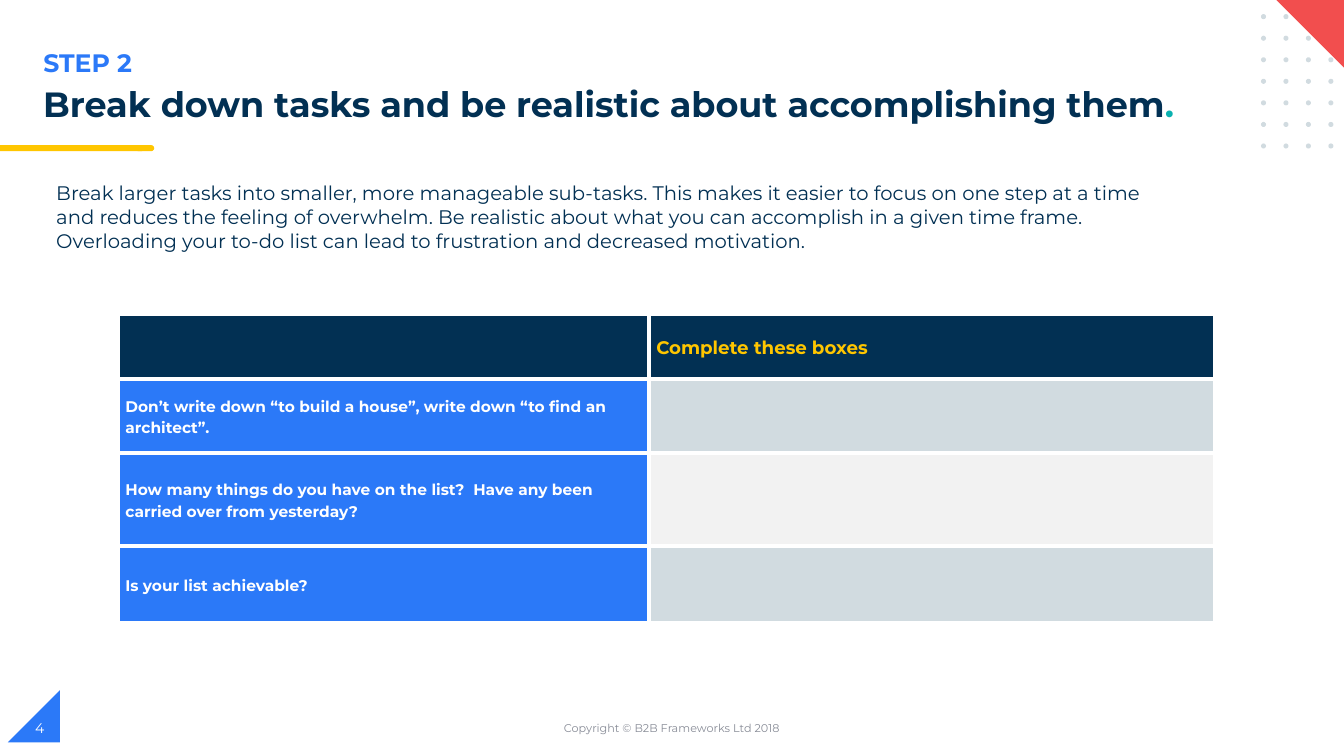
from dataclasses import dataclass

from lxml.etree import SubElement
from pptx import Presentation
from pptx.dml.color import RGBColor
from pptx.enum.shapes import MSO_SHAPE
from pptx.enum.text import MSO_ANCHOR, PP_ALIGN
from pptx.oxml.ns import qn
from pptx.util import Pt


@dataclass(frozen=True)
class Theme:
    font: str = "Montserrat"
    navy: str = "023053"
    blue: str = "2B79F8"
    yellow: str = "FFC600"
    red: str = "F24E4E"
    teal: str = "0AB1B0"
    mist: str = "D1DBE0"
    pale: str = "F2F2F2"
    grey: str = "888C97"
    white: str = "FFFFFF"
    title_size: float = 25
    step_size: float = 18
    body_size: float = 14
    header_size: float = 13
    cell_size: float = 11
    number_size: float = 10
    footer_size: float = 8


THEME = Theme()

QUESTIONS = [
    "Don’t write down “to build a house”, write down “to find an architect”.",
    "How many things do you have on the list?  Have any been carried over from yesterday?",
    "Is your list achievable?",
]
INTRODUCTION = (
    "Break larger tasks into smaller, more manageable sub-tasks. This makes it easier to "
    "focus on one step at a time and reduces the feeling of overwhelm. Be realistic about "
    "what you can accomplish in a given time frame. Overloading your to-do list can lead "
    "to frustration and decreased motivation."
)


def format_run(run, size, color, bold=False):
    run.font.name = THEME.font
    run.font.size = Pt(size)
    run.font.bold = bold
    run.font.color.rgb = RGBColor.from_string(color)


def add_shape(slide, kind, left, top, width, height, color, rotation=0):
    shape = slide.shapes.add_shape(kind, Pt(left), Pt(top), Pt(width), Pt(height))
    shape.shadow.inherit = False
    shape.fill.solid()
    shape.fill.fore_color.rgb = RGBColor.from_string(color)
    shape.line.fill.background()
    shape.rotation = rotation


def add_text(slide, text, left, top, width, height, size, color, bold=False,
             anchor=MSO_ANCHOR.TOP, alignment=PP_ALIGN.LEFT):
    """Add a one-paragraph text box and return the paragraph."""
    box = slide.shapes.add_textbox(Pt(left), Pt(top), Pt(width), Pt(height))
    frame = box.text_frame
    frame.word_wrap = True
    frame.vertical_anchor = anchor
    frame.text = text
    paragraph = frame.paragraphs[0]
    paragraph.alignment = alignment
    format_run(paragraph.runs[0], size, color, bold)
    return paragraph


def add_dot_grid(slide):
    for row in range(7):
        for column in range(4):
            add_shape(slide, MSO_SHAPE.OVAL, 900.7 + 16.05 * column, 10.1 + 15.4 * row,
                      3.6, 3.6, THEME.mist)


def add_title_rule(slide):
    add_shape(slide, MSO_SHAPE.FLOWCHART_TERMINATOR, 96.5, 103.7, 13.7, 4.3, THEME.yellow)
    add_shape(slide, MSO_SHAPE.RECTANGLE, 0, 103.7, 101.5, 4.3, THEME.yellow)


def add_borders(cell, color, width):
    properties = cell._tc.get_or_add_tcPr()
    for position, edge in enumerate(("a:lnL", "a:lnR", "a:lnT", "a:lnB")):
        line = properties.makeelement(qn(edge), {"w": str(Pt(width))})
        fill = SubElement(line, qn("a:solidFill"))
        SubElement(fill, qn("a:srgbClr"), val=color)
        properties.insert(position, line)


def fill_cell(cell, fill, text="", size=THEME.cell_size, color=THEME.white):
    cell.fill.solid()
    cell.fill.fore_color.rgb = RGBColor.from_string(fill)
    add_borders(cell, THEME.white, 3)
    cell.vertical_anchor = MSO_ANCHOR.MIDDLE
    cell.margin_left = cell.margin_right = Pt(5.4)
    cell.margin_top = cell.margin_bottom = 0
    if text:
        cell.text_frame.text = text
        paragraph = cell.text_frame.paragraphs[0]
        paragraph.line_spacing = 1.15
        format_run(paragraph.runs[0], size, color, bold=True)


def add_worksheet(slide):
    widths, heights = (379.2, 404.6), (46.3, 53.2, 66.3, 55.3)
    table = slide.shapes.add_table(len(heights), len(widths), Pt(84.2), Pt(224.2),
                                   Pt(sum(widths)), Pt(sum(heights))).table
    for column, width in zip(table.columns, widths):
        column.width = Pt(width)
    for row, height in zip(table.rows, heights):
        row.height = Pt(height)
    fill_cell(table.cell(0, 0), THEME.navy)
    fill_cell(table.cell(0, 1), THEME.navy, "Complete these boxes",
              THEME.header_size, THEME.yellow)
    for row, question in enumerate(QUESTIONS, start=1):
        fill_cell(table.cell(row, 0), THEME.blue, question)
        fill_cell(table.cell(row, 1), THEME.mist if row % 2 else THEME.pale)


def main():
    presentation = Presentation()
    presentation.slide_width, presentation.slide_height = Pt(960), Pt(540)
    slide = presentation.slides.add_slide(presentation.slide_layouts[6])

    add_shape(slide, MSO_SHAPE.RIGHT_TRIANGLE, 5.6, 493, 37.2, 37.2, THEME.blue, 270)
    add_title_rule(slide)
    add_dot_grid(slide)
    add_shape(slide, MSO_SHAPE.RIGHT_TRIANGLE, 911, -0.7, 51.8, 51.8, THEME.red, 180)

    add_text(slide, "STEP 2", 23.8, 30.2, 481.7, 28.8, THEME.step_size, THEME.blue, True)
    title = add_text(slide, "Break down tasks and be realistic about accomplishing them",
                     23.8, 59, 856.8, 40.3, THEME.title_size, THEME.navy, True)
    title.line_spacing = 0.9
    full_stop = title.add_run()
    full_stop.text = "."
    format_run(full_stop, THEME.title_size, THEME.teal, True)

    add_text(slide, "Copyright © B2B Frameworks Ltd 2018", 318, 505.4, 324, 28.8,
             THEME.footer_size, THEME.grey, anchor=MSO_ANCHOR.MIDDLE,
             alignment=PP_ALIGN.CENTER)
    add_text(slide, "4", 18, 505.4, 216, 28.8, THEME.number_size, THEME.white,
             anchor=MSO_ANCHOR.MIDDLE)
    add_worksheet(slide)
    add_text(slide, INTRODUCTION, 33.1, 126, 794.9, 58.3, THEME.body_size, THEME.navy)
    presentation.save("out.pptx")


if __name__ == "__main__":
    main()
